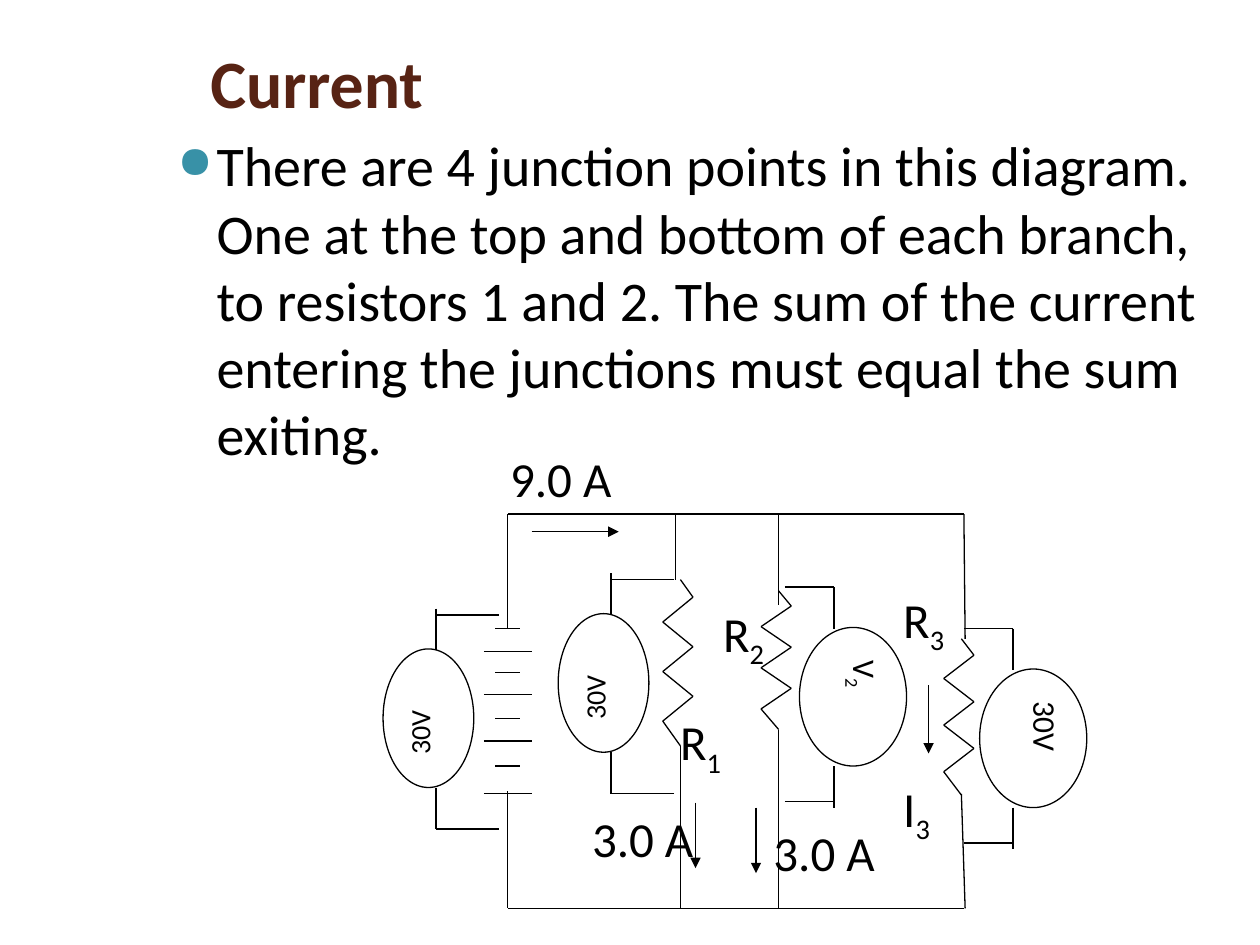
from itertools import pairwise

from lxml.etree import SubElement
from pptx import Presentation
from pptx.dml.color import RGBColor
from pptx.enum.shapes import MSO_CONNECTOR, MSO_SHAPE
from pptx.enum.text import MSO_ANCHOR, PP_ALIGN
from pptx.oxml.ns import qn
from pptx.util import Inches, Pt

BROWN = RGBColor(0x57, 0x23, 0x14)
BLACK = RGBColor(0x00, 0x00, 0x00)
WHITE = RGBColor(0xFF, 0xFF, 0xFF)
FONT = "Calibri"
TOP, BOTTOM = 4.08, 7.21
BATTERY_X, R1_X, R2_X, R3_X = 4.03, 5.4, 6.18, 7.63


def style_run(r, size, color=BLACK, bold=False):
    """Set the font of one run."""
    r.font.name = FONT
    r.font.size = Pt(size)
    r.font.color.rgb = color
    r.font.bold = bold


def add_title(s, text):
    """Place and format the title placeholder."""
    sp = s.shapes.title
    sp.left, sp.top, sp.width, sp.height = map(Inches, (1.57, 0.3, 8.2, 0.69))
    tf = sp.text_frame
    tf.text = text
    tf.vertical_anchor = MSO_ANCHOR.MIDDLE
    p = tf.paragraphs[0]
    p.alignment = PP_ALIGN.LEFT
    style_run(p.runs[0], 38.7, BROWN, True)


def add_bullet_text(s, text):
    """Add the body text with its coloured bullet."""
    sp = s.shapes.add_textbox(*map(Inches, (1.22, 0.99, 8.55, 5.84)))
    tf = sp.text_frame
    tf.word_wrap = True
    tf.text = text
    p = tf.paragraphs[0]
    p.space_before = Pt(6)
    style_run(p.runs[0], 32)
    pPr = p._p.get_or_add_pPr()
    pPr.set("marL", str(Inches(0.4)))
    pPr.set("indent", str(Inches(-0.31)))
    color = SubElement(pPr, qn("a:buClr"))
    SubElement(color, qn("a:srgbClr"), val="3891A7")
    SubElement(pPr, qn("a:buSzPct"), val="80000")
    SubElement(pPr, qn("a:buChar"), char="●")


def add_text_shape(s, kind, box, text, sub, size, line):
    """Add a white shape with left-aligned text and an optional subscript."""
    sp = s.shapes.add_shape(kind, *map(Inches, box))
    sp.shadow.inherit = False
    sp.fill.solid()
    sp.fill.fore_color.rgb = WHITE
    sp.line.color.rgb = line
    sp.line.width = Pt(0.75)
    tf = sp.text_frame
    tf.vertical_anchor = MSO_ANCHOR.TOP
    p = tf.paragraphs[0]
    p.text = text
    p.alignment = PP_ALIGN.LEFT
    p.space_after = Pt(10)
    if sub:
        r = p.add_run()
        r.text = sub
        r.font._element.set("baseline", "-25000")
    for r in p.runs:
        style_run(r, size)
    return sp


def add_wire(s, x1, y1, x2, y2, arrow=False):
    """Add a thin black line, with an arrowhead for a current."""
    c = s.shapes.add_connector(MSO_CONNECTOR.STRAIGHT, *map(Inches, (x1, y1, x2, y2)))
    c.line.color.rgb = BLACK
    c.line.width = Pt(0.75)
    if arrow:
        SubElement(c.line._get_or_add_ln(), qn("a:tailEnd"), type="triangle")
    SubElement(c._element.spPr, qn("a:effectLst"))


def add_resistor(s, x, top, lead, bottom):
    """Draw a zigzag between two heights on a branch."""
    xs = [x] + [x + 0.1, x - 0.14] * 3 + [x]
    step = (bottom - top - lead) / 6
    ys = [top] + [top + lead + i * step for i in range(7)]
    for start, end in pairwise(zip(xs, ys)):
        add_wire(s, *start, *end)


def add_battery(s):
    """Draw alternating short and long plates."""
    for i, y in enumerate((4.99, 5.17, 5.34, 5.51, 5.7, 5.88, 6.08, 6.3)):
        half = 0.19 if i % 2 else 0.1
        add_wire(s, BATTERY_X - half, y, BATTERY_X + half, y)


def add_voltmeter(s, center_x, width, rotation, label, lead_x, branch_x, top, bar):
    """Draw a rotated meter with the leads that join it to a branch."""
    text, sub, size = label
    box = (center_x - 0.55, top + 0.87 - width / 2, 1.1, width)
    sp = add_text_shape(s, MSO_SHAPE.OVAL, box, text, sub, size, BLACK)
    sp.rotation = rotation
    for y in (bar, bar + 1.7):
        add_wire(s, branch_x, y, lead_x, y)
    for y in (top, top + 1.42):
        add_wire(s, lead_x, y, lead_x, y + 0.33)


def main():
    """Build the slide."""
    prs = Presentation()
    prs.slide_width, prs.slide_height = Inches(10), Inches(7.5)
    s = prs.slides.add_slide(prs.slide_layouts[5])
    add_title(s, "Current")
    add_bullet_text(
        s,
        "There are 4 junction points in this diagram. One at the top and bottom "
        "of each branch, to resistors 1 and 2. The sum of the current entering "
        "the junctions must equal the sum exiting.",
    )

    labels = [
        (3.95, 3.51, 1.16, "9.0 A", ""),
        (7.07, 6.13, 0.73, "I", "3"),
        (6.04, 6.48, 1.02, "3.0 A", ""),
        (4.6, 6.37, 1.02, "3.0 A", ""),
        (7.07, 4.63, 0.77, "R", "3"),
        (5.64, 4.74, 0.77, "R", "2"),
        (5.3, 5.6, 0.77, "R", "1"),
    ]
    for x, y, w, text, sub in labels:
        add_text_shape(s, MSO_SHAPE.RECTANGLE, (x, y, w, 0.66), text, sub, 28, WHITE)

    wires = [
        (BATTERY_X, TOP, 7.65, TOP),
        (BATTERY_X, BOTTOM, 7.65, BOTTOM),
        (BATTERY_X, TOP, BATTERY_X, 4.99),
        (BATTERY_X, 6.28, BATTERY_X, BOTTOM),
        (5.36, TOP, 5.36, 4.6),
        (R1_X, 5.92, R1_X, BOTTOM),
        (R2_X, TOP, R2_X, 4.8),
        (R2_X, 5.79, R2_X, BOTTOM),
        (7.65, TOP, 7.66, 5.07),
        (R3_X, 6.3, 7.66, BOTTOM),
    ]
    for wire in wires:
        add_wire(s, *wire)

    add_battery(s)
    add_resistor(s, R1_X, 4.6, 0.14, 5.92)
    add_resistor(s, R2_X, 4.69, 0.12, 5.79)
    add_resistor(s, R3_X, 5.07, 0.13, 6.31)

    add_voltmeter(s, 3.4, 0.72, 270, ("30V", "", 16), 3.46, 3.96, 4.83, 4.88)
    add_voltmeter(s, 4.79, 0.72, 270, ("30V", "", 16), 4.85, 5.35, 4.55, 4.6)
    add_voltmeter(s, 8.2, 0.85, 90, ("30V", "", 18), 8.04, 7.65, 4.99, 4.99)
    add_voltmeter(s, 6.77, 0.85, 90, ("V", "2", 18), 6.62, 6.23, 4.66, 4.66)

    currents = [
        (4.22, 4.22, 4.91, 4.22),
        (5.52, 6.37, 5.52, 6.89),
        (6, 6.41, 6, 6.93),
        (7.37, 5.44, 7.37, 5.98),
    ]
    for current in currents:
        add_wire(s, *current, arrow=True)
    prs.save("out.pptx")


if __name__ == "__main__":
    main()
